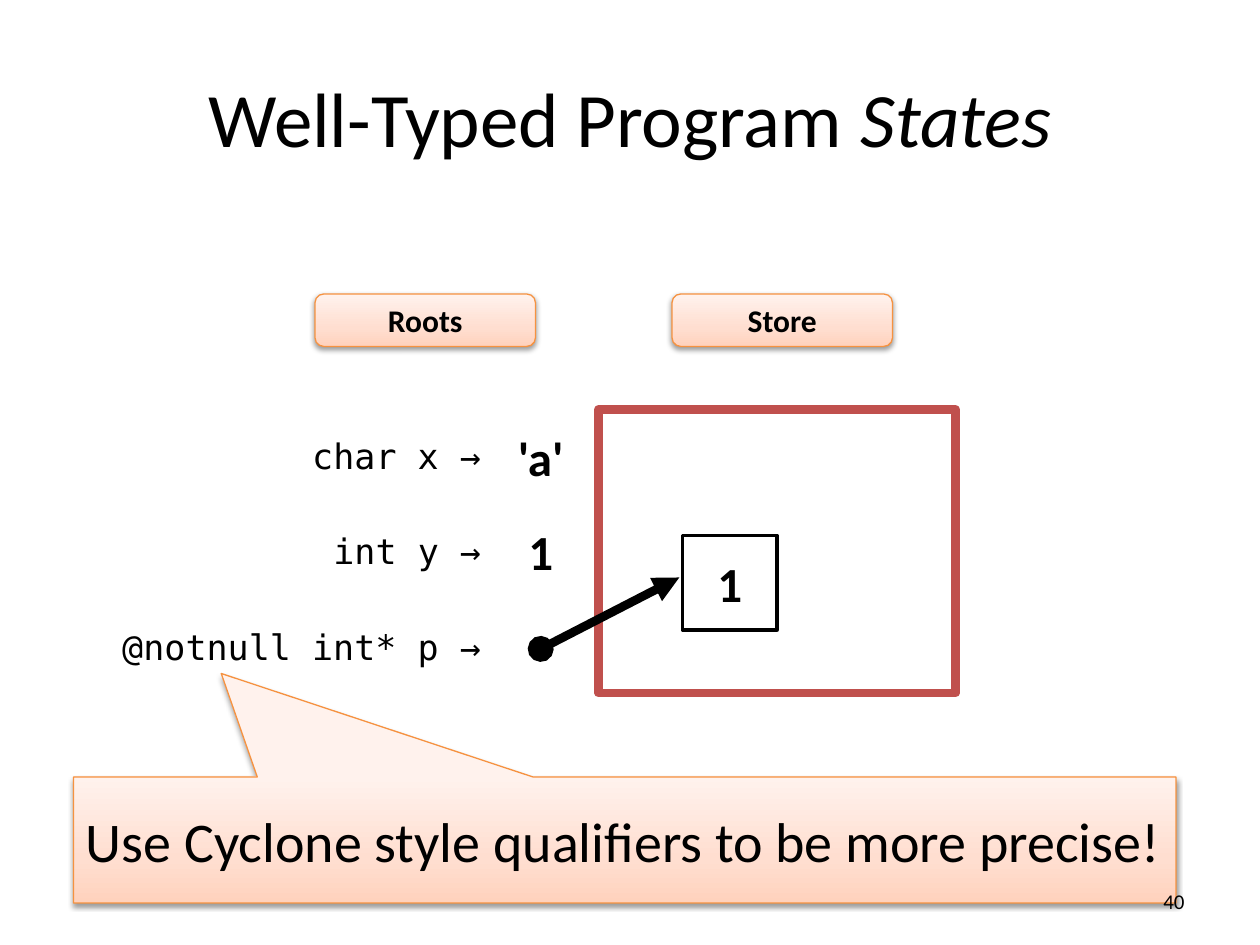
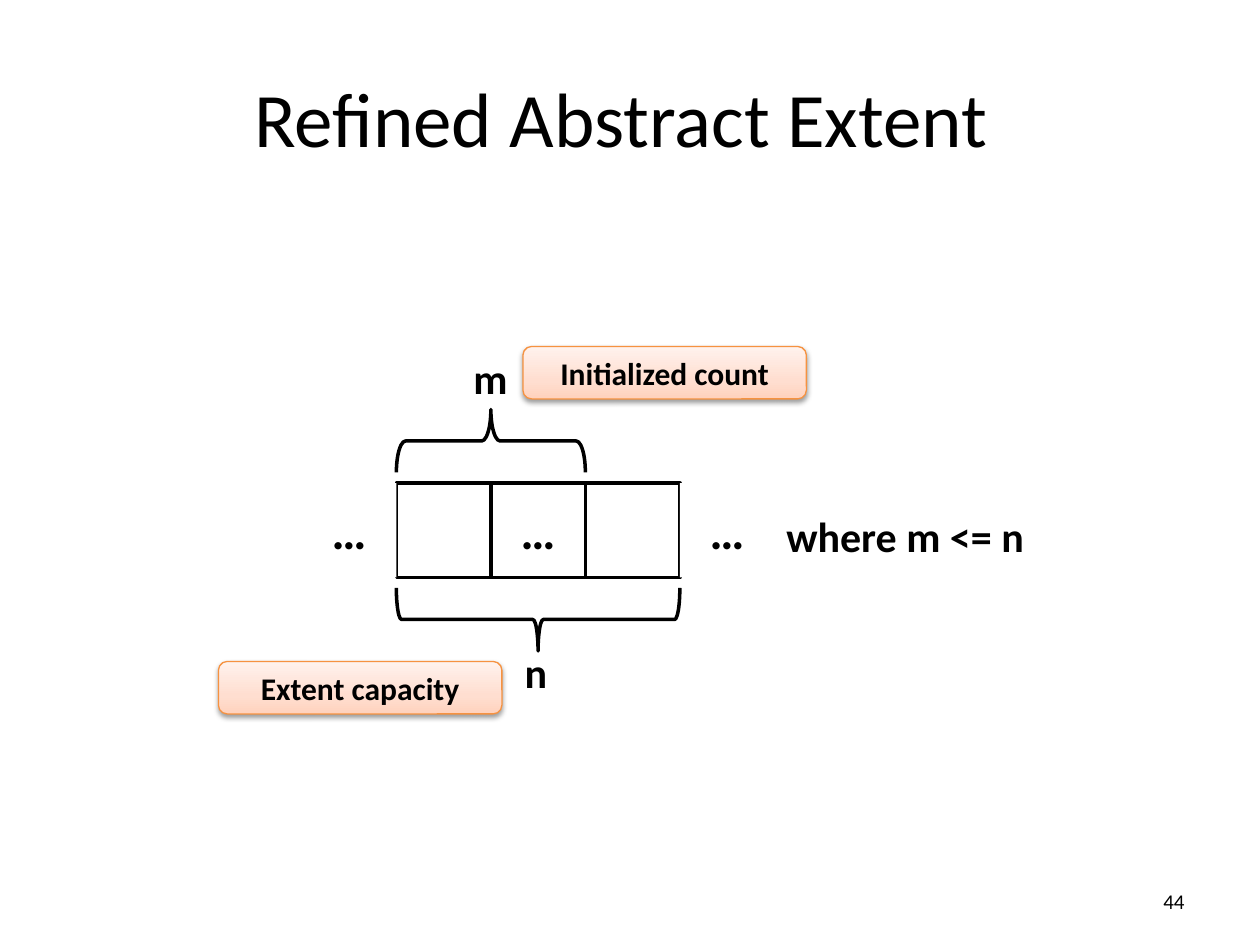
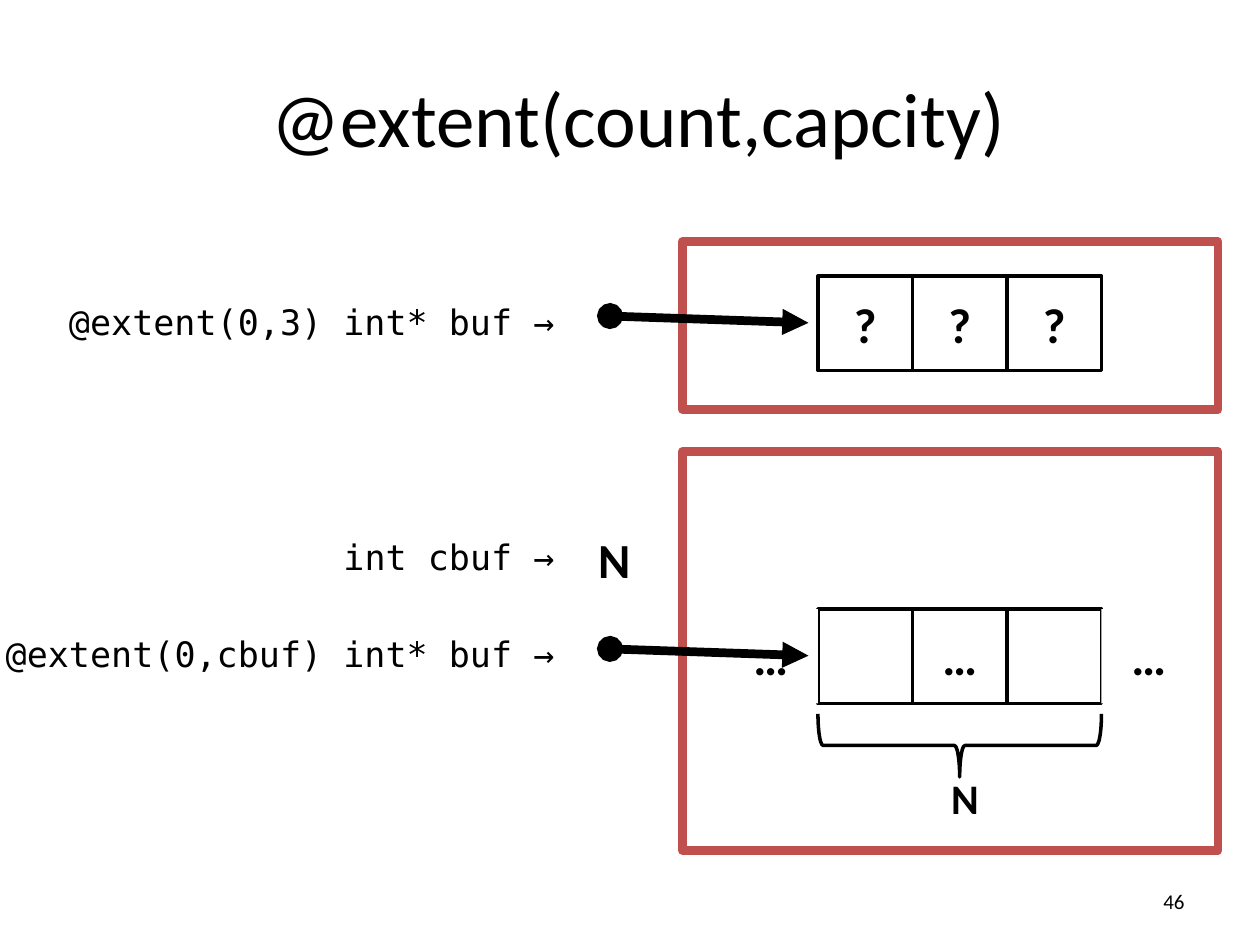
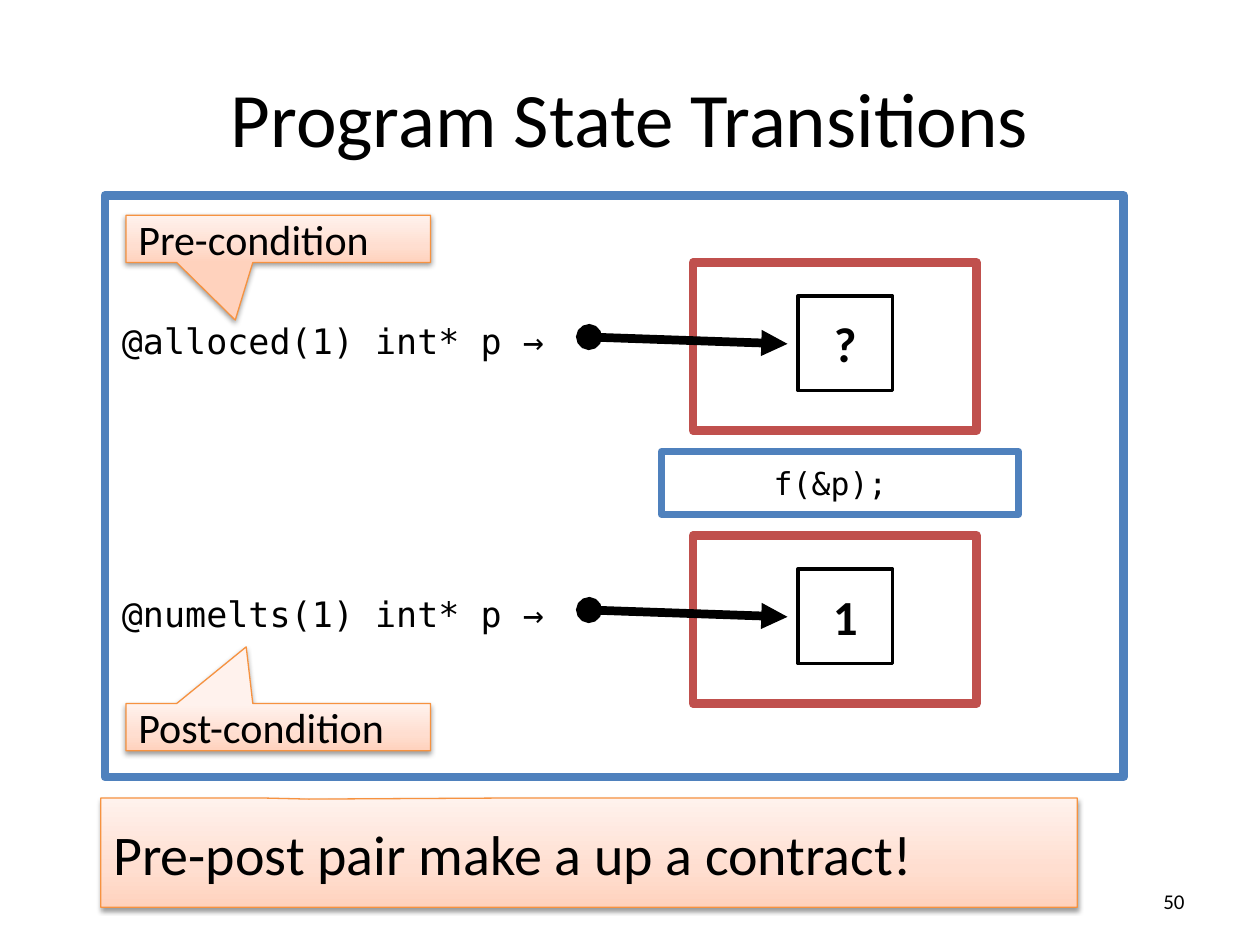
from copy import deepcopy
from dataclasses import dataclass

from lxml.etree import SubElement
from pptx import Presentation
from pptx.dml.color import RGBColor
from pptx.enum.shapes import MSO_CONNECTOR, MSO_SHAPE
from pptx.enum.text import MSO_ANCHOR, PP_ALIGN
from pptx.oxml.ns import qn
from pptx.util import Inches, Pt


@dataclass(frozen=True)
class Theme:
    font: str = "Calibri"
    mono: str = "DejaVu Sans Mono"
    black: str = "000000"
    white: str = "FFFFFF"
    red: str = "C0504D"
    blue: str = "4F81BD"
    orange: str = "F69240"
    peach: tuple = ((0, "FFD2BD"), (0.35, "FFDED0"), (1, "FFF2ED"))
    title: int = 44
    banner: int = 32
    value: int = 28
    label: int = 24
    code: int = 20
    tag: int = 18
    page: int = 12
    thick: int = 5
    thin: int = 2


T = Theme()
COLUMNS, ROWS = 120, 90
WIDTH, HEIGHT = Inches(10), Inches(7.5)
CELL = 9
LEFT, CENTER, RIGHT = PP_ALIGN.LEFT, PP_ALIGN.CENTER, PP_ALIGN.RIGHT
MIDDLE = MSO_ANCHOR.MIDDLE


def col(n):
    return round(WIDTH * n / COLUMNS)


def row(n):
    return round(HEIGHT * n / ROWS)


def place(box):
    left, top, width, height = box
    return col(left), row(top), col(width), row(height)


def style(r, size, font=T.font, bold=False, italic=False):
    r.font.size = Pt(size)
    r.font.name = font
    r.font.bold = bold
    r.font.italic = italic
    r.font.color.rgb = RGBColor.from_string(T.black)


def write(sp, text, size, align=CENTER, anchor=MIDDLE, wrap=True, **look):
    tf = sp.text_frame
    tf.word_wrap = wrap
    tf.vertical_anchor = anchor
    p = tf.paragraphs[0]
    p.text = text
    p.alignment = align
    for r in p.runs:
        style(r, size, **look)
    return p


def add_text(s, box, text, size, **look):
    return write(s.shapes.add_textbox(*place(box)), text, size, **look)


def add_box(s, kind, box, fill=T.white, line=None, weight=T.thick):
    sp = s.shapes.add_shape(kind, *place(box))
    sp.shadow.inherit = False
    if fill:
        sp.fill.solid()
        sp.fill.fore_color.rgb = RGBColor.from_string(fill)
    else:
        sp.fill.background()
    if line:
        sp.line.color.rgb = RGBColor.from_string(line)
        sp.line.width = Pt(weight)
    else:
        sp.line.fill.background()
    return sp


def add_peach(s, kind, box):
    sp = add_box(s, kind, box, line=T.orange, weight=0.75)
    sp.fill.gradient()
    sp.fill.gradient_angle = 90
    props = sp.element.spPr
    stops = props.find(".//" + qn("a:gsLst"))
    stops.insert(1, deepcopy(stops[0]))
    for stop, (position, color) in zip(sp.fill.gradient_stops, T.peach):
        stop.position = position
        stop.color.rgb = RGBColor.from_string(color)
    shadow = SubElement(props.find(qn("a:effectLst")), qn("a:outerShdw"),
                        blurRad=str(Pt(3.1)), dist=str(Pt(1.6)),
                        dir="5400000", rotWithShape="0")
    color = SubElement(shadow, qn("a:srgbClr"), val=T.black)
    SubElement(color, qn("a:alpha"), val="38000")
    return sp


def add_tag(s, box, text):
    write(add_peach(s, MSO_SHAPE.ROUNDED_RECTANGLE, box), text, T.tag, bold=True)


def add_callout(s, box, text, size, tip):
    sp = add_peach(s, MSO_SHAPE.RECTANGULAR_CALLOUT, box)
    sp.adjustments[0], sp.adjustments[1] = tip
    write(sp, text, size, align=LEFT)


def add_store(s, box):
    add_box(s, MSO_SHAPE.ROUNDED_RECTANGLE, box, line=T.red).adjustments[0] = 0


def add_cell(s, left, top, text="", framed=True):
    sp = add_box(s, MSO_SHAPE.RECTANGLE, (left, top, CELL, CELL),
                 line=T.black if framed else None, weight=T.thin)
    if text:
        write(sp, text, T.value, bold=True)


def add_cells(s, left, top, texts):
    for i, text in enumerate(texts):
        add_cell(s, left + i * CELL, top, text)


def add_extent(s, left, top):
    add_cells(s, left, top, ["", "…", ""])
    for side in (left - CELL, left + 3 * CELL):
        add_cell(s, side, top, "…", framed=False)
    add_brace(s, left, top + 10, 3 * CELL, 270)


def add_brace(s, left, top, span, rotation, curl=0.083, depth=6):
    box = (left + (span - depth) / 2, top + (depth - span) / 2, depth, span)
    sp = add_box(s, MSO_SHAPE.LEFT_BRACE, box, None, T.black, T.thin)
    sp.adjustments[0] = curl
    sp.rotation = rotation


def add_label(s, left, top, width, text):
    add_text(s, (left, top, width, 6), text, T.label, align=LEFT,
             anchor=MSO_ANCHOR.TOP, wrap=False, bold=True)


def add_value(s, left, top, text):
    add_text(s, (left, top, CELL, CELL), text, T.value, bold=True)


def add_root(s, right, top, width, text):
    add_text(s, (right - width, top, width, 5.25), text, T.code, align=RIGHT,
             anchor=MSO_ANCHOR.TOP, font=T.mono)


def add_pointer(s, x, y, across=18.9, down=0.65):
    line = s.shapes.add_connector(MSO_CONNECTOR.STRAIGHT, col(x), row(y),
                                  col(x + across), row(y + down))
    line.line.color.rgb = RGBColor.from_string(T.black)
    line.line.width = Pt(T.thick)
    props = line.element.spPr
    ln = props.find(qn("a:ln"))
    SubElement(ln, qn("a:headEnd"), type="oval")
    SubElement(ln, qn("a:tailEnd"), type="triangle")
    SubElement(props, qn("a:effectLst"))


def add_slide(prs, title, emphasis=""):
    s = prs.slides.add_slide(prs.slide_layouts[6])
    p = add_text(s, (6, 3.6, 108, 15), title, T.title)
    if emphasis:
        r = p.add_run()
        r.text = emphasis
        style(r, T.title, italic=True)
    return s


def add_page(s, number):
    add_text(s, (86, 83.4, 28, 4.8), str(number), T.page, align=RIGHT)


def program_states(prs):
    s = add_slide(prs, "Well-Typed Program ", "States")
    add_store(s, (57, 39, 34, 27))
    for top, width, text in ((40.8, 33, "char x →"), (49.8, 42.5, "int y →"),
                             (59, 39, " @notnull int* p →")):
        add_root(s, 47, top, width, text)
    for i, text in enumerate(("'a'", "1")):
        add_value(s, 47, 39 + i * CELL, text)
    add_pointer(s, 51.5, 61.8, 13.2, -6.8)
    add_cell(s, 65, 51, "1")
    for left, text in ((30, "Roots"), (64, "Store")):
        add_tag(s, (left, 28, 21, 5), text)
    add_callout(s, (7, 74, 105, 12),
                "Use Cyclone style qualifiers to be more precise!",
                T.banner, (-0.366, -1.321))
    add_page(s, 40)


def abstract_extent(prs):
    s = add_slide(prs, "Refined Abstract Extent ")
    left, top = 37.75, 46
    add_extent(s, left, top)
    add_brace(s, left, top - 7, 2 * CELL, 90, curl=0.146)
    add_label(s, 43.9, 33, 5.8, "m")
    add_label(s, 48.8, 61, 4.6, "n")
    add_label(s, 73.7, 48, 25.3, "where m <= n")
    add_tag(s, (49.8, 33, 27, 5), "Initialized count")
    add_tag(s, (20.8, 63, 27, 5), "Extent capacity")
    add_page(s, 44)


def extent_qualifier(prs):
    s = add_slide(prs, " @extent(count,capcity)")
    left = 77.9
    for top, height in ((23, 16), (43, 38)):
        add_store(s, (65, top, 51, height))
    for top, width, text in ((28, 53, " @extent(0,3) int* buf →"),
                             (50.4, 36, " int cbuf →"),
                             (59.6, 57, " @extent(0,cbuf) int* buf →")):
        add_root(s, 54, top, width, text)
    add_value(s, 54, 48.7, "N")
    add_cells(s, left, 26.3, "???")
    add_extent(s, left, 58)
    add_label(s, 89.4, 73, 5, "N")
    for y in (30.1, 61.8):
        add_pointer(s, 58.1, y)
    add_page(s, 46)


def state_transitions(prs):
    s = add_slide(prs, "Program State Transitions")
    add_box(s, MSO_SHAPE.RECTANGLE, (10, 18.6, 97, 55.4), None, T.blue)
    for top, text, value in ((25, " @alloced(1) int* p →", "?"),
                             (51, " @numelts(1) int* p →", "1")):
        add_store(s, (66, top, 27, 16))
        add_root(s, 53, top + 4.8, 50, text)
        add_cell(s, 76, top + 3.2, value)
        add_pointer(s, 56.1, top + 7.1)
    call = add_box(s, MSO_SHAPE.RECTANGLE, (63, 43, 34, 6), line=T.blue, weight=4)
    write(call, "f(&p); ", T.tag, font=T.mono)
    for top, text, tip in ((67, "Post-condition", (-0.105, -1.699)),
                           (20.5, "Pre-condition", (-0.141, 1.718))):
        add_callout(s, (12, top, 29, 4.5), text, T.label, tip)
    add_callout(s, (9.6, 76, 93, 10.4), "Pre-post pair make a up a contract!",
                T.banner, (-0.287, -0.49))
    add_page(s, 50)


def main():
    prs = Presentation()
    prs.slide_width, prs.slide_height = WIDTH, HEIGHT
    for build in (program_states, abstract_extent, extent_qualifier, state_transitions):
        build(prs)
    prs.save("out.pptx")


if __name__ == "__main__":
    main()
